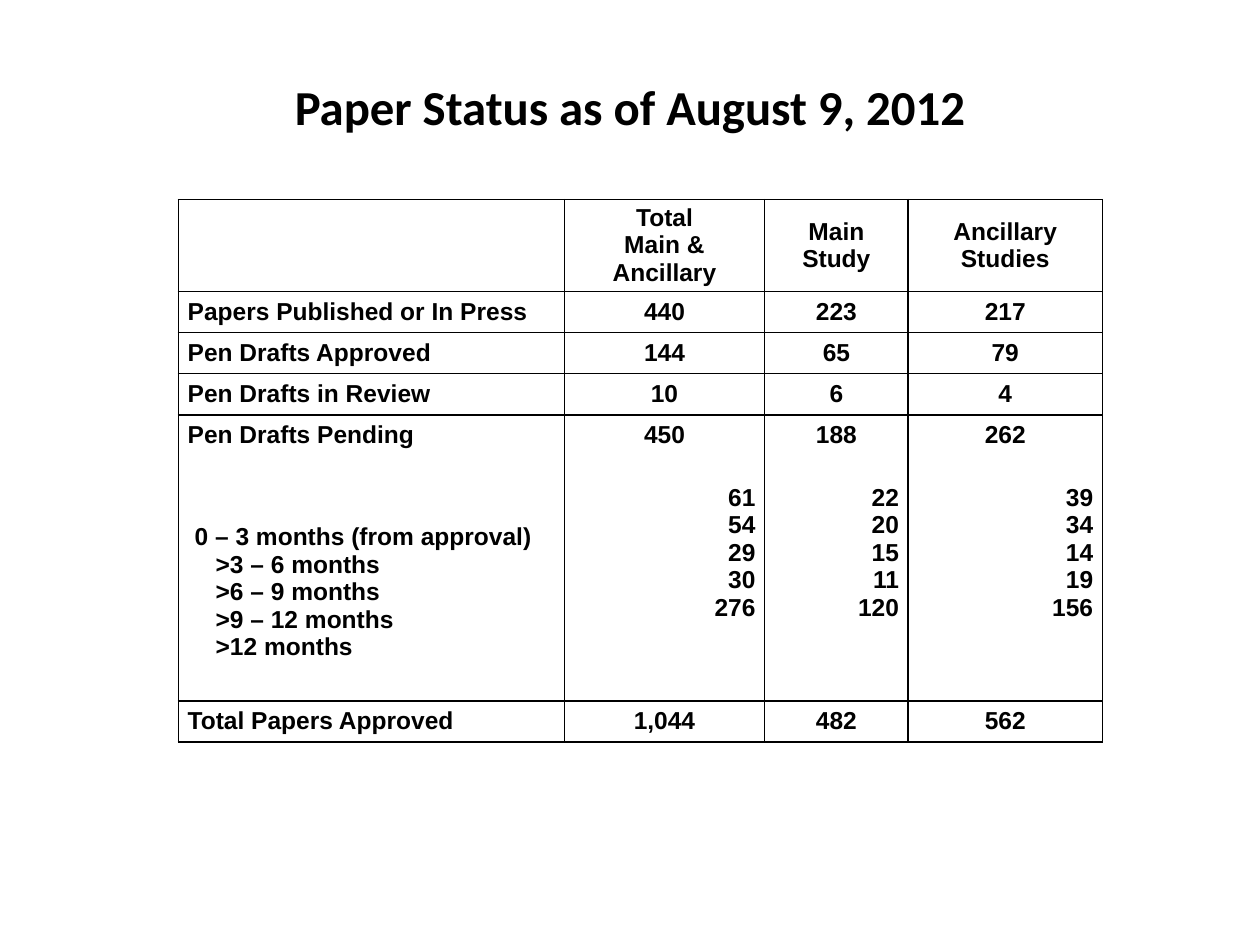
from lxml import etree
from pptx import Presentation
from pptx.dml.color import RGBColor
from pptx.enum.text import MSO_ANCHOR, PP_ALIGN
from pptx.oxml.ns import qn
from pptx.util import Pt

LEFT, CENTER, RIGHT = PP_ALIGN.LEFT, PP_ALIGN.CENTER, PP_ALIGN.RIGHT
TOP, MIDDLE = MSO_ANCHOR.TOP, MSO_ANCHOR.MIDDLE
BLACK = RGBColor(0, 0, 0)

# Content: a line break inside a cell starts a new paragraph
TITLE = "Paper Status as of August 9, 2012"
AGES = ["0 – 3 months (from approval)", ">3 – 6 months", ">6 – 9 months",
        ">9 – 12 months", ">12 months"]
AGE_COUNTS = [(61, 54, 29, 30, 276), (22, 20, 15, 11, 120), (39, 34, 14, 19, 156)]
STATUS = [
    ("", "Total\nMain & Ancillary", "Main\nStudy", "Ancillary Studies"),
    ("Papers Published or In Press", "440", "223", "217"),
    ("Pen Drafts Approved", "144", "65", "79"),
    ("Pen Drafts in Review", "10", "6", "4"),
    ("Pen Drafts Pending", "450", "188", "262"),
    ("\n".join(AGES), *("\n".join(map(str, counts)) for counts in AGE_COUNTS)),
    ("Total Papers Approved", "1,044", "482", "562"),
]
PENDING_ROW, AGE_ROW = 4, 5

# Layout in points
TABLE_LEFT, TABLE_TOP = 102, 114
COLUMN_WIDTHS = [220.5, 114.5, 82, 111]
ROW_HEIGHTS = [52.5, 23.5, 23.5, 23.5, 23.5, 140, 23.5]
SIDE_MARGIN, AGE_TOP_MARGIN = 5.25, 16
FIRST_AGE_INDENT, AGE_INDENT = 4, 16


def style_font(paragraph, name, size):
    paragraph.font.name = name
    paragraph.font.size = Pt(size)
    paragraph.font.bold = True
    paragraph.font.color.rgb = BLACK


def draw_borders(cell, hidden_side):
    properties = cell._tc.get_or_add_tcPr()
    for side in ("lnL", "lnR", "lnT", "lnB"):
        line = etree.SubElement(properties, qn("a:" + side), w=str(Pt(1)))
        if side == hidden_side:
            etree.SubElement(line, qn("a:noFill"))
        else:
            fill = etree.SubElement(line, qn("a:solidFill"))
            etree.SubElement(fill, qn("a:srgbClr"), val=str(BLACK))


def fill_cell(cell, text, row, column):
    is_age = row == AGE_ROW
    draw_borders(cell, {PENDING_ROW: "lnB", AGE_ROW: "lnT"}.get(row))
    cell.fill.background()
    cell.margin_left = cell.margin_right = Pt(SIDE_MARGIN)
    cell.margin_top = Pt(AGE_TOP_MARGIN if is_age else 0)
    cell.margin_bottom = Pt(0)
    cell.vertical_anchor = TOP if is_age and column else MIDDLE
    cell.text = text
    for index, paragraph in enumerate(cell.text_frame.paragraphs):
        style_font(paragraph, "Arial", 14)
        if column == 0:
            paragraph.alignment = LEFT
        else:
            paragraph.alignment = RIGHT if is_age else CENTER
        if is_age and column == 0:
            indent = AGE_INDENT if index else FIRST_AGE_INDENT
            paragraph._p.get_or_add_pPr().set("marL", str(Pt(indent)))


presentation = Presentation()
presentation.slide_width, presentation.slide_height = Pt(720), Pt(540)
slide = presentation.slides.add_slide(presentation.slide_layouts[5])

# Title
title = slide.shapes.title
title.left, title.top, title.width, title.height = Pt(36), Pt(36), Pt(648), Pt(60)
title.text_frame.text = TITLE
title.text_frame.vertical_anchor = MIDDLE
title.text_frame.margin_bottom = Pt(15)
title_line = title.text_frame.paragraphs[0]
title_line.alignment = CENTER
style_font(title_line, "Calibri", 27.9)

# Status table
table = slide.shapes.add_table(
    len(STATUS), len(COLUMN_WIDTHS), Pt(TABLE_LEFT), Pt(TABLE_TOP),
    Pt(sum(COLUMN_WIDTHS)), Pt(sum(ROW_HEIGHTS))).table
table.first_row = table.horz_banding = False
for column, width in zip(table.columns, COLUMN_WIDTHS):
    column.width = Pt(width)
for row, height in zip(table.rows, ROW_HEIGHTS):
    row.height = Pt(height)
for row_index, texts in enumerate(STATUS):
    for column_index, text in enumerate(texts):
        fill_cell(table.cell(row_index, column_index), text, row_index, column_index)

presentation.save("out.pptx")
